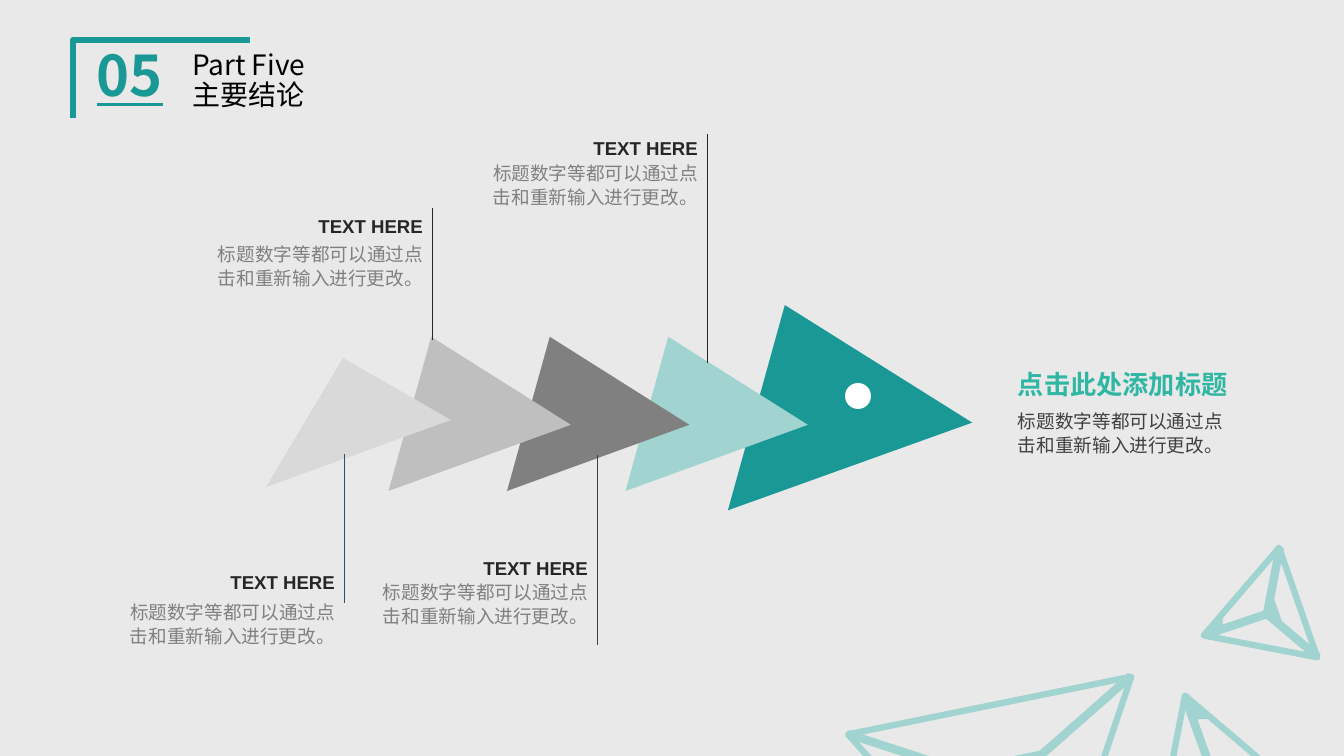
from dataclasses import dataclass

from lxml import etree
from pptx import Presentation
from pptx import util as u
from pptx.dml.color import RGBColor
from pptx.enum import shapes, text
from pptx.oxml.ns import qn

PX = 12192000 / 1344


@dataclass(frozen=True)
class Theme:
    background: str = "E9E9E9"
    teal: str = "1A9895"
    pale_teal: str = "A1D3D0"
    mint: str = "2FB7A3"
    black: str = "000000"
    ink: str = "262626"
    dark: str = "404040"
    petrol: str = "215968"
    grey: str = "808080"
    silver: str = "BFBFBF"
    light: str = "D9D9D9"
    white: str = "FFFFFF"
    cjk_font: str = "Noto Sans CJK SC"
    latin_font: str = "Arial"
    number_size: float = 40
    title_size: float = 20
    heading_size: float = 18.7
    body_size: float = 13.3


theme = Theme()


def px(*lengths):
    """Turn pixel lengths into a list of EMU lengths."""
    return [u.Emu(round(length * PX)) for length in lengths]


def write(shape, lines, size, color, font=theme.cjk_font, spacing=0.88,
          bold=False, underline=None, align=text.PP_ALIGN.LEFT, wrap=True):
    """Fill a shape with one paragraph per line, all in one format."""
    frame = shape.text_frame
    frame.word_wrap = wrap
    frame.auto_size = text.MSO_AUTO_SIZE.NONE
    frame.vertical_anchor = text.MSO_ANCHOR.TOP
    for index, line in enumerate(lines):
        paragraph = frame.add_paragraph() if index else frame.paragraphs[0]
        paragraph.alignment = align
        paragraph.line_spacing = spacing
        paragraph.space_before = u.Pt(0)
        run = paragraph.add_run()
        run.text = line
        run.font.size = u.Pt(size)
        run.font.name = font
        run.font.bold = bold
        run.font.underline = underline
        run.font.color.rgb = RGBColor.from_string(color)
        east_asian = etree.SubElement(run._r.rPr, qn("a:ea"))
        east_asian.set("typeface", font)


presentation = Presentation()
presentation.slide_width, presentation.slide_height = px(1344, 756)
slide = presentation.slides.add_slide(presentation.slide_layouts[5])
slide.background.fill.solid()
slide.background.fill.fore_color.rgb = RGBColor.from_string(theme.background)
canvas = slide.shapes

# Outlines by points: points, closed, fill, line, line width
outlines = [
    ([(73, 118), (73, 40), (250, 40)], False, None, theme.teal, 4.5),
    ([(1195, 719), (1208, 718), (1190, 704)], True, theme.pale_teal, theme.pale_teal, 1),
    ([(1222, 627), (1222, 618), (1211, 631)], True, theme.pale_teal, theme.pale_teal, 1),
    ([(343, 358), (451, 420), (266, 487)], True, theme.light, None, 0),
]

# Triangles: left, top, width, height, rotation, apex, fill, line, line width
frames = [
    (1132, 692, 148, 127, 340.7, 0.5, theme.background, theme.pale_teal, 4.5),
    (870, 703, 289, 249, 168.5, 0.5, theme.background, theme.pale_teal, 4.5),
    (1193, 569, 116, 100, 250.8, 0.5, theme.background, theme.pale_teal, 4.5),
]
hubs = [
    (966, 759, 76, 23, 168.5, 0.5, theme.pale_teal, theme.pale_teal, 1),
    (1258, 607, 30, 9, 250.8, 0.5, theme.pale_teal, theme.pale_teal, 1),
]
arrows = [(752, 330, 213, 212, 105.5, 0.297, theme.teal, None, 0)]
for step, color in enumerate([theme.pale_teal, theme.grey, theme.silver]):
    arrows.append((643 - 118.5 * step, 356, 160, 158, 105.5, 0.297, color, None, 0))

# Lines: from x, from y, to x, to y, colour, width
spokes = [(*ends, theme.pale_teal, 6) for ends in [
    (1185, 697, 1213, 775), (1131, 676, 1006, 786), (848, 734, 1007, 786),
    (1205, 635, 1267, 614), (1318, 657, 1267, 614), (1280, 547, 1267, 614)]]

# Callouts: stem x, stem top, stem bottom, stem colour, heading top, body top
callouts = [
    (708, 134, 363, theme.ink, 132, 155),
    (433, 208, 340, theme.ink, 210, 236),
    (598, 455, 645, theme.dark, 552, 574),
    (345, 454, 603, theme.petrol, 566, 594),
]
stems = [(x, top, x, bottom, color, 0.75) for x, top, bottom, color, _, _ in callouts]

layers = [("triangle", frames), ("line", spokes), ("triangle", hubs + arrows),
          ("outline", outlines), ("line", stems)]
for kind, items in layers:
    for item in items:
        if kind == "line":
            *ends, line, width = item
            shape = canvas.add_connector(shapes.MSO_CONNECTOR.STRAIGHT, *px(*ends))
            etree.SubElement(shape._element.spPr, qn("a:effectLst"))
        else:
            if kind == "triangle":
                *box, rotation, apex, fill, line, width = item
                shape = canvas.add_shape(shapes.MSO_SHAPE.ISOSCELES_TRIANGLE, *px(*box))
                shape.rotation = rotation
                shape.adjustments[0] = apex
            else:
                points, closed, fill, line, width = item
                builder = canvas.build_freeform(*points[0], scale=PX)
                builder.add_line_segments(points[1:], close=closed)
                shape = builder.convert_to_shape()
            shape.shadow.inherit = False
            if fill:
                shape.fill.solid()
                shape.fill.fore_color.rgb = RGBColor.from_string(fill)
            else:
                shape.fill.background()
        if line:
            shape.line.color.rgb = RGBColor.from_string(line)
            shape.line.width = u.Pt(width)
        else:
            shape.line.fill.background()

eye = canvas.add_shape(shapes.MSO_SHAPE.OVAL, *px(845, 383, 26, 26))
eye.shadow.inherit = False
eye.fill.solid()
eye.fill.fore_color.rgb = RGBColor.from_string(theme.white)
eye.line.fill.background()

title = canvas.title
title.left, title.top, title.width, title.height = px(182, 47, 242, 78)
write(title, ["Part Five", "主要结论"], theme.title_size, theme.black)
number = canvas.add_textbox(*px(87, 44, 96, 78))
write(number, ["05"], theme.number_size, theme.teal, bold=True, underline=True)

description = "标题数字等都可以通过点击和重新输入进行更改。"
for x, _, _, _, heading_top, body_top in callouts:
    heading = canvas.add_textbox(*px(x - 165, heading_top, 165, 33))
    write(heading, ["TEXT HERE"], theme.body_size, theme.ink, font=theme.latin_font,
          spacing=1, bold=True, align=text.PP_ALIGN.RIGHT)
    body = canvas.add_textbox(*px(x - 236, body_top, 236, 69))
    write(body, [description], theme.body_size, theme.grey, spacing=1.08,
          align=text.PP_ALIGN.RIGHT)

conclusion = canvas.add_textbox(*px(1008, 403, 231, 69))
write(conclusion, [description], theme.body_size, theme.dark, spacing=1.08)
conclusion_heading = canvas.add_textbox(*px(1008, 367, 231, 42))
write(conclusion_heading, ["点击此处添加标题"], theme.heading_size, theme.mint,
      bold=True, wrap=False)

presentation.save("out.pptx")
